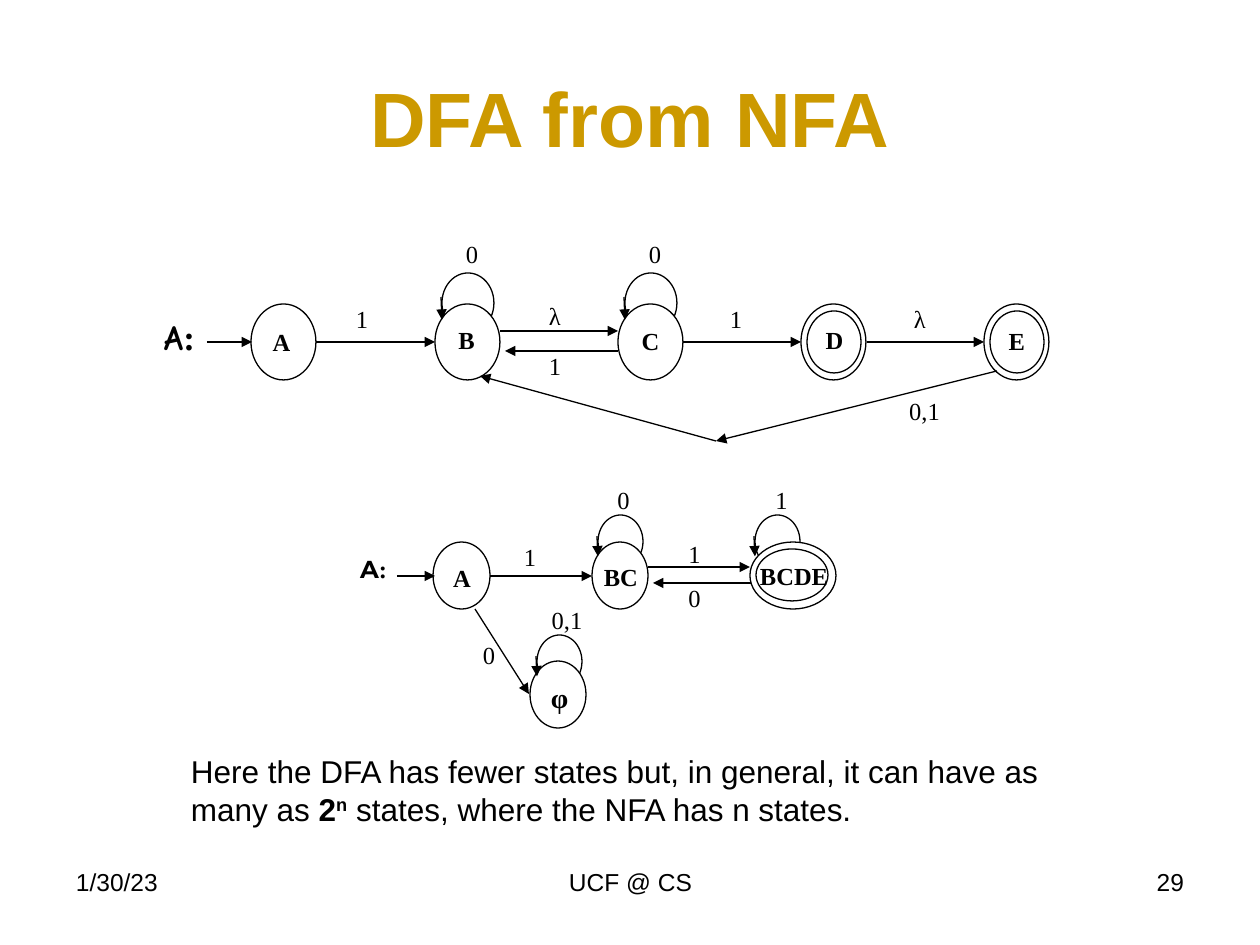
from lxml import etree
from pptx import Presentation
from pptx.dml.color import RGBColor
from pptx.enum.shapes import MSO_CONNECTOR, MSO_SHAPE
from pptx.enum.text import MSO_ANCHOR, PP_ALIGN
from pptx.oxml.ns import qn
from pptx.util import Pt

LEFT, CENTER, RIGHT = PP_ALIGN.LEFT, PP_ALIGN.CENTER, PP_ALIGN.RIGHT
TOP, MIDDLE = MSO_ANCHOR.TOP, MSO_ANCHOR.MIDDLE
OVAL, LINE = MSO_SHAPE.OVAL, MSO_CONNECTOR.STRAIGHT
BLACK = RGBColor(0, 0, 0)
WHITE = RGBColor(255, 255, 255)
GOLD = RGBColor(0xCC, 0x99, 0)
SANS, SERIF = "Arial", "Times New Roman"
PX = 914400 / 126

deck = Presentation()
deck.slide_width, deck.slide_height = int(1260 * PX), int(945 * PX)
slide = deck.slides.add_slide(deck.slide_layouts[6])
shapes = slide.shapes


def write(box, runs, size=14, bold=False, align=CENTER, pad=(13, 6),
          color=BLACK, anchor=TOP):
    """Add a text box; runs are (text, font) pairs."""
    frame = shapes.add_textbox(*[int(n * PX) for n in box]).text_frame
    frame.word_wrap = True
    frame.vertical_anchor = anchor
    frame.margin_left = frame.margin_right = int(pad[0] * PX)
    frame.margin_top = frame.margin_bottom = int(pad[1] * PX)
    para = frame.paragraphs[0]
    para.alignment = align
    for text, face in runs:
        run = para.add_run()
        run.text = text
        run.font.name, run.font.size, run.font.bold = face, Pt(size), bold
        run.font.color.rgb = color
    return para


def arrow(*ends):
    """Draw an arrow from x1, y1 to x2, y2."""
    link = shapes.add_connector(LINE, *[int(n * PX) for n in ends])
    link.line.color.rgb = BLACK
    link.line.width = Pt(0.75)
    etree.SubElement(link.line._get_or_add_ln(), qn("a:tailEnd"), type="triangle")
    etree.SubElement(link._element.spPr, qn("a:effectLst"))


# Title and footer
write((63, 38, 1134, 157), [("DFA from NFA", SANS)], 44, True,
      color=GOLD, anchor=MIDDLE)
for x, wide, text, align in [(63, 294, "1/30/23", LEFT),
                             (431, 399, "UCF @ CS", CENTER),
                             (903, 294, "29", RIGHT)]:
    write((x, 861, wide, 66), [(text, SANS)], align=align)

# State circles: loops go behind the states, inner rings in front
nfa_x = (251, 435, 618, 801, 984)
nfa_loops = [(442, 273, 52, 60), (625, 273, 52, 60)]
dfa_loops = [(755, 515, 45, 53), (598, 515, 45, 53), (537, 635, 45, 53)]
states = [(x, 304, 65, 76) for x in nfa_x]
states += [(433, 542, 57, 67), (592, 542, 56, 67),
           (750, 542, 86, 67), (530, 661, 56, 67)]
rings = [(x + 6, 311, 54, 62) for x in nfa_x[3:]] + [(756, 549, 72, 52)]
for box in nfa_loops + dfa_loops + states + rings:
    ring = shapes.add_shape(OVAL, *[int(n * PX) for n in box])
    ring.shadow.inherit = False
    ring.fill.solid()
    ring.fill.fore_color.rgb = WHITE
    ring.line.color.rgb = BLACK
    ring.line.width = Pt(0.75)

# Arrowheads on the loops
for x, y, wide, high in nfa_loops + dfa_loops:
    arrow(x - 1, y + high * 0.4, x, y + high * 0.78)

# Transitions of the NFA, then of the DFA
for ends in [(207, 342, 252, 342), (316, 342, 435, 342), (500, 331, 618, 331),
             (683, 342, 801, 342), (867, 342, 984, 342), (618, 351, 505, 351),
             (997, 371, 716, 441), (716, 441, 480, 376),
             (397, 576, 435, 576), (490, 576, 592, 576), (648, 567, 750, 567),
             (751, 583, 653, 583), (475, 609, 529, 694)]:
    arrow(*ends)

# State names
for x, y, wide, name in [(257, 321, 49, "A"), (442, 319, 49, "B"),
                         (626, 320, 49, "C"), (810, 319, 49, "D"),
                         (992, 320, 50, "E"), (440, 557, 43, "A"),
                         (588, 556, 66, "BC")]:
    write((x, y, wide, 48), [(name, SERIF)], bold=True)
write((754, 555, 80, 45), [("BCDE", SERIF)], bold=True, pad=(0, 6))
write((538, 675, 43, 43), [("φ", SERIF)], 16, True, LEFT)

# Transition symbols
for x, y, wide, sign in [(459, 239, 26, "0"), (642, 239, 26, "0"),
                         (542, 301, 26, "λ"), (542, 351, 26, "1"),
                         (723, 304, 26, "1"), (895, 304, 50, "λ"),
                         (899, 396, 51, "0,1"), (612, 485, 23, "0"),
                         (770, 485, 23, "1"), (683, 539, 23, "1"),
                         (683, 583, 23, "0"), (546, 605, 42, "0,1")]:
    write((x, y, wide, 36), [(sign, SERIF)], pad=(0, 0))
for x, y, sign in [(356, 304, "1"), (524, 542, "1"), (483, 640, "0")]:
    write((x, y, 24, 40), [(sign, SERIF)], align=LEFT, pad=(0, 0))

# Machine names
write((140, 310, 79, 48), [("A", "Comic Neue"), (":", SERIF)], 20, True)
write((340, 548, 67, 43), [("A", "Montserrat"), (":", SERIF)], 14, True)

# Remark
remark = write((178, 746, 892, 89), [
    ("Here the DFA has fewer states but, in general, it can have as many as ", SANS),
    ("2", SANS), ("n", SANS),
    (" states, where the NFA has n states.", SANS)], 18, align=LEFT)
base, power = remark.runs[1:3]
base.font.bold = power.font.bold = True
power.font._element.set("baseline", "30000")

deck.save("out.pptx")
